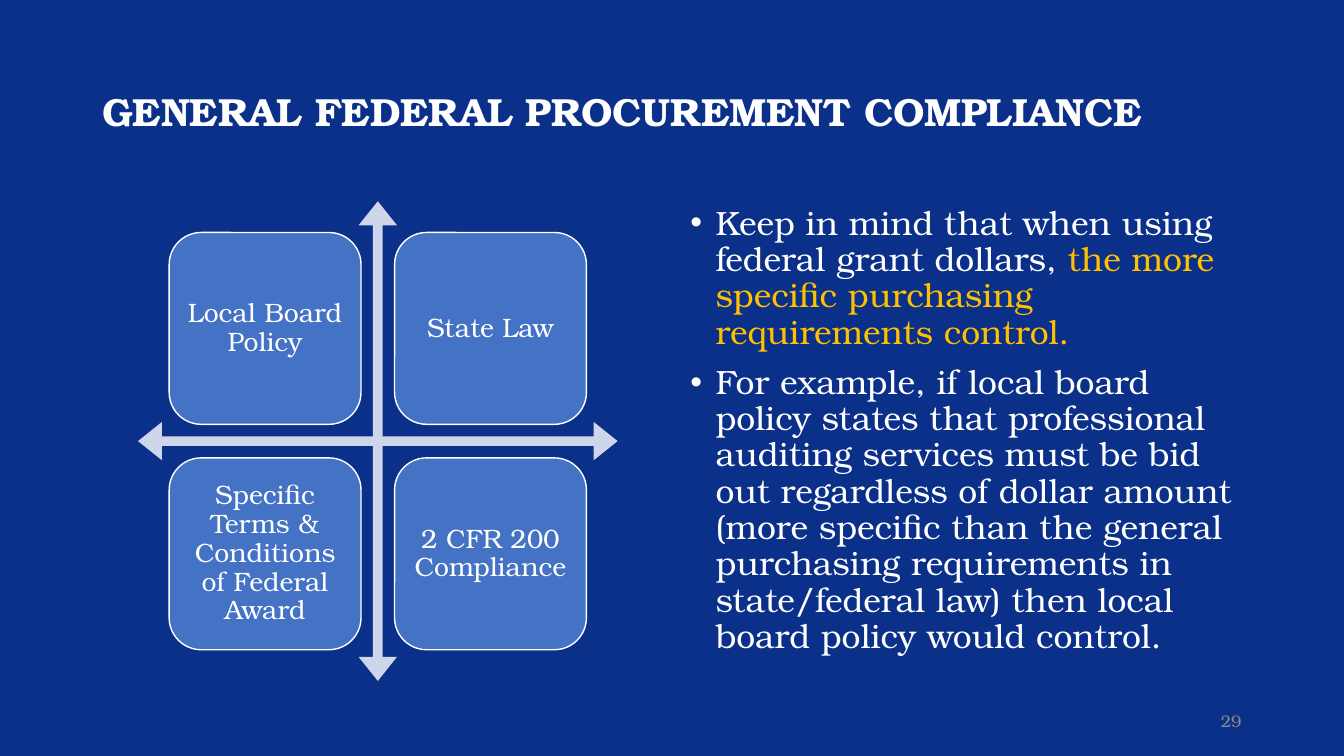
import dataclasses

import pptx
import pptx.dml.color
import pptx.enum.shapes
import pptx.enum.text
import pptx.oxml.ns
import pptx.util
from lxml import etree

Pt = pptx.util.Pt
ALIGN = pptx.enum.text.PP_ALIGN
ANCHOR = pptx.enum.text.MSO_ANCHOR
SHAPE = pptx.enum.shapes.MSO_SHAPE


@dataclasses.dataclass(frozen=True)
class Theme:
    font: str = "TeX Gyre Bonum"
    background: str = "0A3089"
    text: str = "FFFFFF"
    highlight: str = "FFC000"
    muted: str = "8C8C8C"
    tile: str = "4472C4"
    arrow: str = "CFD5EA"
    title_size: int = 28
    body_size: int = 24
    tile_size: int = 19
    number_size: int = 12


THEME = Theme()

TILE_ROWS = [
    ["Local Board Policy", "State Law"],
    ["Specific Terms & Conditions of Federal Award", "2 CFR 200 Compliance"],
]
BULLETS = [
    [
        ("Keep in mind that when using federal grant dollars,", THEME.text),
        (" the more specific purchasing requirements control.", THEME.highlight),
    ],
    [
        (
            "For example, if local board policy states that professional auditing "
            "services must be bid out regardless of dollar amount (more specific than "
            "the general purchasing requirements in state/federal law) then local "
            "board policy would control.",
            THEME.text,
        ),
    ],
]


def rgb(value):
    return pptx.dml.color.RGBColor.from_string(value)


def style_font(font, size, color, bold=False):
    font.name = THEME.font
    font.size = Pt(size)
    font.bold = bold
    font.color.rgb = rgb(color)


def add_text_box(slide, left, top, width, height, anchor=ANCHOR.MIDDLE):
    box = slide.shapes.add_textbox(Pt(left), Pt(top), Pt(width), Pt(height))
    box.text_frame.word_wrap = True
    box.text_frame.vertical_anchor = anchor
    return box.text_frame


def add_filled_shape(slide, kind, left, top, size, color):
    shape = slide.shapes.add_shape(kind, Pt(left), Pt(top), Pt(size), Pt(size))
    shape.shadow.inherit = False
    shape.fill.solid()
    shape.fill.fore_color.rgb = rgb(color)
    shape.line.fill.background()
    return shape


def add_line_of_text(text_frame, text, size, color, align, spacing=1.0, bold=False):
    text_frame.text = text
    paragraph = text_frame.paragraphs[0]
    paragraph.alignment = align
    paragraph.line_spacing = spacing
    style_font(paragraph.runs[0].font, size, color, bold)


def add_tile(slide, text, left, top, size):
    tile = add_filled_shape(slide, SHAPE.ROUNDED_RECTANGLE, left, top, size, THEME.tile)
    tile.line.color.rgb = rgb(THEME.text)
    tile.line.width = Pt(1)
    frame = tile.text_frame
    frame.word_wrap = True
    frame.vertical_anchor = ANCHOR.MIDDLE
    frame.margin_left = frame.margin_right = Pt(5.7)
    frame.margin_top = frame.margin_bottom = Pt(5.7)
    add_line_of_text(frame, text, THEME.tile_size, THEME.text, ALIGN.CENTER, 0.9)


def add_matrix(slide, left, top, size):
    arrow = add_filled_shape(slide, SHAPE.QUAD_ARROW, left, top, size, THEME.arrow)
    for index, value in enumerate((0.02, 0.04, 0.05)):
        arrow.adjustments[index] = value
    tile_size = size * 0.4
    pitch = size * 0.47
    inset = (size - pitch - tile_size) / 2
    for row, labels in enumerate(TILE_ROWS):
        for column, label in enumerate(labels):
            tile_left = left + inset + column * pitch
            tile_top = top + inset + row * pitch
            add_tile(slide, label, tile_left, tile_top, tile_size)


def add_bullet(paragraph, indent):
    properties = paragraph._p.get_or_add_pPr()
    properties.set("marL", str(Pt(indent)))
    properties.set("indent", str(-Pt(indent)))
    font = etree.SubElement(properties, pptx.oxml.ns.qn("a:buFont"))
    font.set("typeface", "Arial")
    bullet = etree.SubElement(properties, pptx.oxml.ns.qn("a:buChar"))
    bullet.set("char", "•")


def add_bullet_list(text_frame, bullets):
    for index, parts in enumerate(bullets):
        paragraph = text_frame.add_paragraph() if index else text_frame.paragraphs[0]
        add_bullet(paragraph, 18)
        paragraph.line_spacing = 0.9
        paragraph.space_before = Pt(10 if index else 0)
        for text, color in parts:
            run = paragraph.add_run()
            run.text = text
            style_font(run.font, THEME.body_size, color)


def main():
    presentation = pptx.Presentation()
    presentation.slide_width = Pt(960)
    presentation.slide_height = Pt(540)
    slide = presentation.slides.add_slide(presentation.slide_layouts[6])
    slide.background.fill.solid()
    slide.background.fill.fore_color.rgb = rgb(THEME.background)

    title = add_text_box(slide, 66, 28.8, 828, 104.4)
    add_line_of_text(title, "GENERAL FEDERAL PROCUREMENT COMPLIANCE",
                     THEME.title_size, THEME.text, ALIGN.LEFT, 0.9, True)
    add_matrix(slide, 98.6, 143.8, 342.6)
    body = add_text_box(slide, 486, 143.8, 408, 342.6, ANCHOR.TOP)
    add_bullet_list(body, BULLETS)
    number = add_text_box(slide, 678, 500.5, 216, 28.8)
    add_line_of_text(number, "29", THEME.number_size, THEME.muted, ALIGN.RIGHT)

    presentation.save("out.pptx")


if __name__ == "__main__":
    main()
